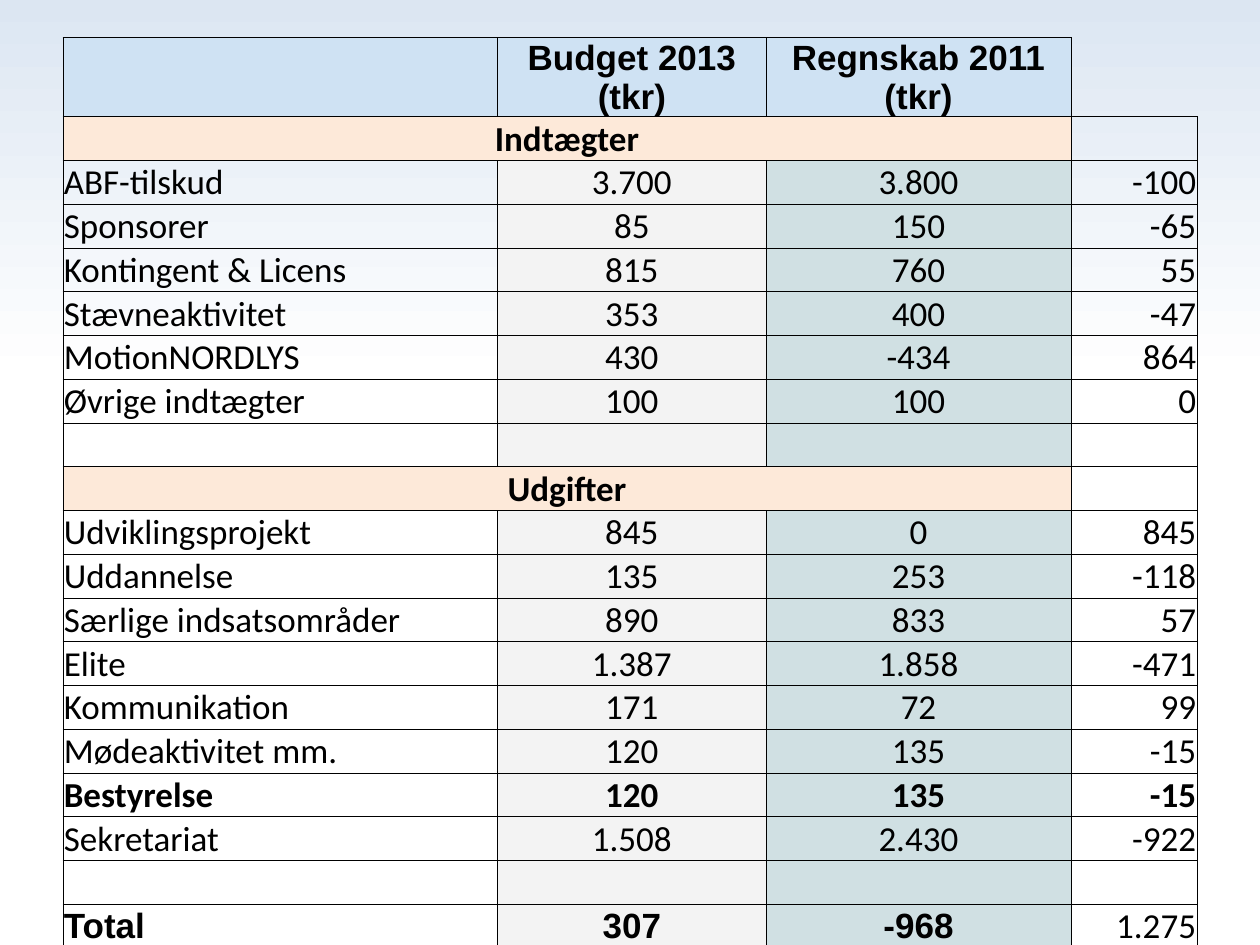
from lxml import etree
from pptx import Presentation
from pptx import util as u
from pptx.dml.color import RGBColor
from pptx.enum import text
from pptx.oxml import ns

HUES = {"ink": "000000", "head": "CFE2F3", "band": "FDE9D9", "plan": "F3F3F3",
        "past": "D0E0E3", "white": "FFFFFF", "sky": "DCE6F2"}
HEADS = ["", "Budget 2013 (tkr)", "Regnskab 2011 (tkr)", ""]
ROWS = [
    ["Indtægter"],
    ["ABF-tilskud", "3.700", "3.800", "-100"],
    ["Sponsorer", "85", "150", "-65"],
    ["Kontingent & Licens", "815", "760", "55"],
    ["Stævneaktivitet", "353", "400", "-47"],
    ["MotionNORDLYS", "430", "-434", "864"],
    ["Øvrige indtægter", "100", "100", "0"],
    [""] * 4,
    ["Udgifter"],
    ["Udviklingsprojekt", "845", "0", "845"],
    ["Uddannelse", "135", "253", "-118"],
    ["Særlige indsatsområder", "890", "833", "57"],
    ["Elite", "1.387", "1.858", "-471"],
    ["Kommunikation", "171", "72", "99"],
    ["Mødeaktivitet mm.", "120", "135", "-15"],
    ["Bestyrelse", "120", "135", "-15"],
    ["Sekretariat", "1.508", "2.430", "-922"],
    [""] * 4,
    ["Total", "307", "-968", "1.275"],
]
WIDTHS = [3.45, 2.13, 2.42, 1]
ALIGN = text.PP_ALIGN
SIDES = [ALIGN.LEFT, ALIGN.CENTER, ALIGN.CENTER, ALIGN.RIGHT]
FILLS = [None, "plan", "past", None]
SIZE = 20
HAIR = u.Pt(0.5)


def rgb(name):
    return RGBColor.from_string(HUES[name])


def edge(cell, drawn="LRTB"):
    """Rule the named sides of a cell and clear the others."""
    props = cell._tc.get_or_add_tcPr()
    for spot, side in enumerate("LRTB"):
        line = etree.Element(ns.qn("a:ln" + side), w=str(HAIR))
        if side in drawn:
            paint = etree.SubElement(line, ns.qn("a:solidFill"))
            etree.SubElement(paint, ns.qn("a:srgbClr"), val=HUES["ink"])
        else:
            etree.SubElement(line, ns.qn("a:noFill"))
        props.insert(spot, line)


def write(cell, words, side, face="Calibri", bold=False):
    para = cell.text_frame.paragraphs[0]
    para.alignment = side
    if not words:
        # An empty cell takes its line height from the end mark
        end = etree.SubElement(para._p, ns.qn("a:endParaRPr"), sz=str(SIZE * 100))
        etree.SubElement(end, ns.qn("a:latin"), typeface=face)
        return
    run = para.add_run()
    run.text = words
    for key, val in {"name": face, "size": u.Pt(SIZE), "bold": bold}.items():
        setattr(run.font, key, val)
    run.font.color.rgb = rgb("ink")


def dress(cell, fill, drawn="LRTB"):
    form = {"margin_left": HAIR, "margin_right": HAIR,
            "margin_top": HAIR, "margin_bottom": 0,
            "vertical_anchor": text.MSO_ANCHOR.MIDDLE}
    for key, val in form.items():
        setattr(cell, key, val)
    if fill:
        cell.fill.solid()
        cell.fill.fore_color.rgb = rgb(fill)
    else:
        cell.fill.background()
    edge(cell, drawn)


def add_head(grid):
    for col, words in enumerate(HEADS):
        cell, last = grid.cell(0, col), col == 3
        dress(cell, None if last else "head", "LB" if last else "LRTB")
        write(cell, words, ALIGN.CENTER, "Arial", True)


def add_band(grid, row, words):
    """Section title across the first three columns."""
    grid.cell(row, 0).merge(grid.cell(row, 2))
    for col in range(4):
        cell = grid.cell(row, col)
        dress(cell, "band" if col < 3 else None)
        write(cell, "" if col else words, ALIGN.CENTER, bold=True)


def add_line(grid, row, words):
    total = words[0] == "Total"
    for col, item in enumerate(words):
        cell, main = grid.cell(row, col), total and col < 3
        dress(cell, FILLS[col])
        write(cell, item, SIDES[col], "Arial" if main else "Calibri",
              main or words[0] == "Bestyrelse")


def add_budget(slide, left, top, width, height):
    frame = slide.shapes.add_table(len(ROWS) + 1, 4, left, top, width, height)
    grid = frame.table
    grid.first_row = grid.horz_banding = False
    for col, wide in zip(grid.columns, WIDTHS):
        col.width = u.Inches(wide)
    for num, row in enumerate(grid.rows):
        row.height = u.Inches(0.31 if num else 0.52)
    add_head(grid)
    for num, words in enumerate(ROWS, 1):
        if len(words) == 1:
            add_band(grid, num, words[0])
        else:
            add_line(grid, num, words)


def add_sky(slide):
    fill = slide.background.fill
    fill.gradient()
    fill.gradient_angle = 90
    for stop, (spot, name) in zip(fill.gradient_stops, [(0.6, "white"), (1, "sky")]):
        stop.position = spot
        stop.color.rgb = rgb(name)


def main():
    deck = Presentation()
    deck.slide_width, deck.slide_height = u.Inches(10), u.Inches(7.5)
    slide = deck.slides.add_slide(deck.slide_layouts[6])
    add_sky(slide)
    add_budget(slide, u.Inches(0.5), u.Inches(0.3), u.Inches(9), u.Inches(7.14))
    deck.save("out.pptx")


if __name__ == "__main__":
    main()
